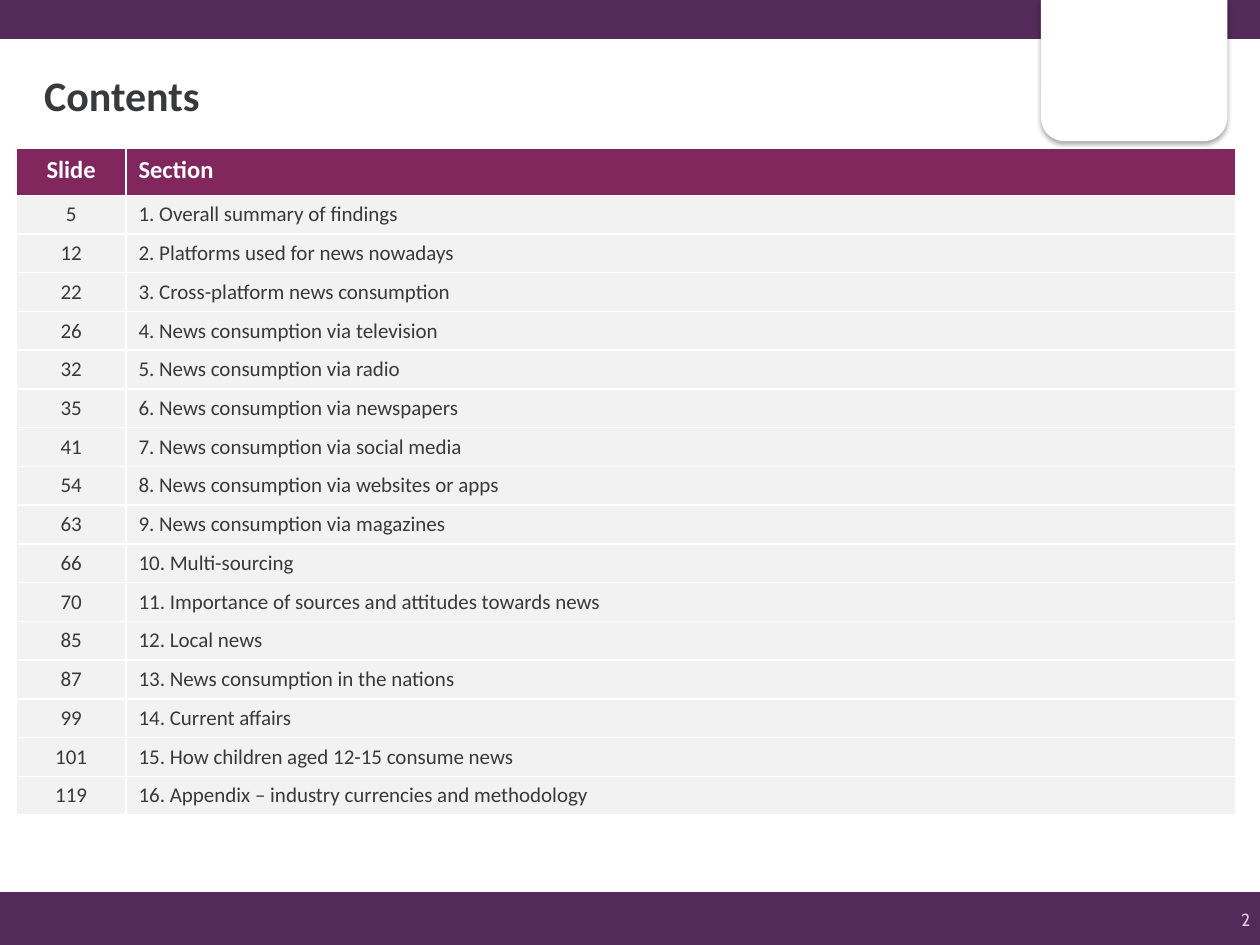
from lxml import etree
from pptx import Presentation
from pptx.dml.color import RGBColor
from pptx.enum.shapes import MSO_SHAPE
from pptx.enum.text import MSO_ANCHOR, PP_ALIGN
from pptx.oxml import parse_xml
from pptx.oxml.ns import nsdecls, qn
from pptx.util import Inches, Pt

LEFT, CENTER, RIGHT = PP_ALIGN.LEFT, PP_ALIGN.CENTER, PP_ALIGN.RIGHT
TOP, MIDDLE = MSO_ANCHOR.TOP, MSO_ANCHOR.MIDDLE
RECTANGLE, TAB = MSO_SHAPE.RECTANGLE, MSO_SHAPE.ROUND_2_SAME_RECTANGLE

COLORS = {
    "band": "532A59",
    "header": "81275E",
    "row": "F2F2F2",
    "text": "38393A",
    "white": "FFFFFF",
    "page": "E3CCE7",
}
TITLE = "Contents"
PAGE_NUMBER = "2"
HEADINGS = ("Slide", "Section")
SECTIONS = [
    (5, "Overall summary of findings"),
    (12, "Platforms used for news nowadays"),
    (22, "Cross-platform news consumption"),
    (26, "News consumption via television"),
    (32, "News consumption via radio"),
    (35, "News consumption via newspapers"),
    (41, "News consumption via social media"),
    (54, "News consumption via websites or apps"),
    (63, "News consumption via magazines"),
    (66, "Multi-sourcing"),
    (70, "Importance of sources and attitudes towards news"),
    (85, "Local news"),
    (87, "News consumption in the nations"),
    (99, "Current affairs"),
    (101, "How children aged 12-15 consume news"),
    (119, "Appendix – industry currencies and methodology"),
]
COLUMN_WIDTHS = (0.87, 8.81)
COLUMN_ALIGNS = (CENTER, LEFT)
TABLE_HEIGHT, HEADER_HEIGHT = 5.29, 0.37


def color(name):
    return RGBColor.from_string(COLORS[name])


def write(frame, text, size=12, tint="text", bold=False, align=LEFT, font="Calibri"):
    paragraph = frame.paragraphs[0]
    paragraph.alignment = align
    run = paragraph.add_run()
    run.text = text
    run.font.name = font
    run.font.size = Pt(size)
    run.font.bold = bold
    run.font.color.rgb = color(tint)


def add_block(slide, kind, box, fill):
    block = slide.shapes.add_shape(kind, *map(Inches, box))
    block.shadow.inherit = False
    block.fill.solid()
    block.fill.fore_color.rgb = color(fill)
    block.line.fill.background()
    return block


def add_soft_shadow(block):
    effects = block._element.spPr.find(qn("a:effectLst"))
    effects.append(parse_xml(
        f'<a:outerShdw {nsdecls("a")} blurRad="{Pt(3.1)}" dist="{Pt(1.8)}" '
        'dir="5400000" algn="t" rotWithShape="0"><a:srgbClr val="000000">'
        '<a:alpha val="35000"/></a:srgbClr></a:outerShdw>'))


def add_borders(cell):
    properties = cell._tc.get_or_add_tcPr()
    for index, side in enumerate(("lnL", "lnR", "lnT", "lnB")):
        line = etree.Element(qn(f"a:{side}"), w=str(Pt(1)))
        fill = etree.SubElement(line, qn("a:solidFill"))
        etree.SubElement(fill, qn("a:srgbClr"), val=COLORS["white"])
        properties.insert(index, line)


def add_contents(slide):
    rows = [HEADINGS] + [
        (str(page), f"{number}. {section}")
        for number, (page, section) in enumerate(SECTIONS, 1)
    ]
    table = slide.shapes.add_table(
        len(rows), len(HEADINGS), Inches(0.13), Inches(1.18),
        Inches(sum(COLUMN_WIDTHS)), Inches(TABLE_HEIGHT)).table
    for column, width in zip(table.columns, COLUMN_WIDTHS):
        column.width = Inches(width)
    row_height = (TABLE_HEIGHT - HEADER_HEIGHT) / len(SECTIONS)
    for r, entries in enumerate(rows):
        heading = r == 0
        table.rows[r].height = Inches(HEADER_HEIGHT if heading else row_height)
        for c, entry in enumerate(entries):
            cell = table.cell(r, c)
            cell.fill.solid()
            cell.fill.fore_color.rgb = color("header" if heading else "row")
            cell.vertical_anchor = TOP if heading else MIDDLE
            write(cell.text_frame, entry, size=14 if heading else 12,
                  tint="white" if heading else "text", bold=heading,
                  align=COLUMN_ALIGNS[c])
            add_borders(cell)


def main():
    """Build the contents slide."""
    deck = Presentation()
    deck.slide_width, deck.slide_height = Inches(10), Inches(7.5)
    slide = deck.slides.add_slide(deck.slide_layouts[5])

    add_block(slide, RECTANGLE, (0, 7.08, 10, 0.44), "band")
    add_block(slide, RECTANGLE, (0, 0, 10, 0.31), "band")
    corner_tab = add_block(slide, TAB, (8.26, 0, 1.48, 1.12), "white")
    corner_tab.rotation = 180
    add_soft_shadow(corner_tab)

    page = slide.shapes.add_textbox(*map(Inches, (9.57, 7.16, 0.45, 0.28)))
    page.text_frame.word_wrap = True
    page.text_frame.vertical_anchor = MIDDLE
    write(page.text_frame, PAGE_NUMBER, size=10, tint="page", align=RIGHT, font="Cabin")

    title = slide.shapes.title
    title.left, title.top, title.width, title.height = map(Inches, (0.25, 0.58, 9.02, 0.34))
    title.text_frame.vertical_anchor = MIDDLE
    write(title.text_frame, TITLE, size=24, bold=True)
    slide.shapes._spTree.append(title._element)

    add_contents(slide)
    deck.save("out.pptx")


if __name__ == "__main__":
    main()
